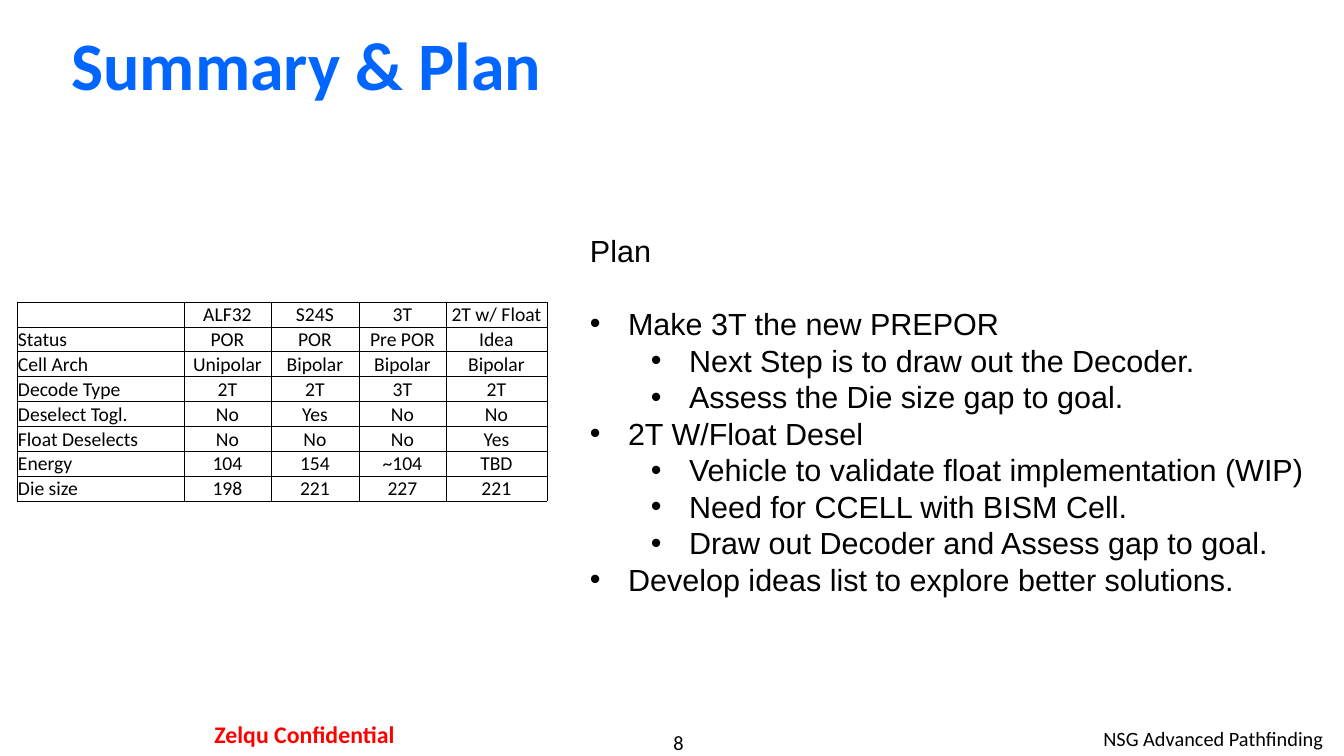
from lxml import etree
from pptx import Presentation
from pptx.dml.color import RGBColor
from pptx.enum.text import MSO_ANCHOR, MSO_AUTO_SIZE, PP_ALIGN
from pptx.oxml.ns import qn
from pptx.util import Pt

LEFT, MID, RIGHT = PP_ALIGN.LEFT, PP_ALIGN.CENTER, PP_ALIGN.RIGHT
TOP, CENTER, BASE = MSO_ANCHOR.TOP, MSO_ANCHOR.MIDDLE, MSO_ANCHOR.BOTTOM
FIXED = MSO_AUTO_SIZE.NONE
TITLE_ONLY = 5

ROWS = [
    ["", "ALF32", "S24S", "3T", "2T w/ Float"],
    ["Status", "POR", "POR", "Pre POR", "Idea"],
    ["Cell Arch", "Unipolar", "Bipolar", "Bipolar", "Bipolar"],
    ["Decode Type", "2T", "2T", "3T", "2T"],
    ["Deselect Togl.", "No", "Yes", "No", "No"],
    ["Float Deselects", "No", "No", "No", "Yes"],
    ["Energy", "104", "154", "~104", "TBD"],
    ["Die size", "198", "221", "227", "221"],
]
PLAN = [
    (0, "Make 3T the new PREPOR"),
    (1, "Next Step is to draw out the Decoder."),
    (1, "Assess the Die size gap to goal."),
    (0, "2T W/Float Desel"),
    (1, "Vehicle to validate float implementation (WIP)"),
    (1, "Need for CCELL with BISM Cell."),
    (1, "Draw out Decoder and Assess gap to goal."),
    (0, "Develop ideas list to explore better solutions."),
]


def px(n):
    return round(n * 914400 / 100.8)


def color(code):
    return RGBColor.from_string(code)


def write(para, text, size=14, font="Calibri", ink="000000", bold=False,
          align=LEFT):
    para.alignment = align
    if not text:
        etree.SubElement(para._p, qn("a:endParaRPr"), sz=str(size * 100))
        return
    run = para.add_run()
    run.text = text
    run.font.size = Pt(size)
    run.font.name = font
    run.font.bold = bold
    run.font.color.rgb = color(ink)


class Page:
    body, lead = 21.8, 26.1  # plan text size and line pitch in points

    def __init__(self, deck):
        self.slide = deck.slides.add_slide(deck.slide_layouts[TITLE_ONLY])

    def frame(self, shape, inset, anchor=TOP):
        frame = shape.text_frame
        frame.word_wrap = True
        frame.auto_size = FIXED
        frame.vertical_anchor = anchor
        frame.margin_left = frame.margin_right = px(inset[0])
        frame.margin_top = frame.margin_bottom = px(inset[1])
        return frame

    def title(self, box, text):
        shape = self.slide.shapes.title
        shape.left, shape.top, shape.width, shape.height = map(px, box)
        frame = self.frame(shape, (10, 5), CENTER)
        write(frame.paragraphs[0], text, size=48.5, ink="0066FF", bold=True,
              align=MID)

    def label(self, box, text, inset=(10, 5), **style):
        shape = self.slide.shapes.add_textbox(*map(px, box))
        frame = self.frame(shape, inset)
        write(frame.paragraphs[0], text, **style)
        return frame

    def bullets(self, box, head, items):
        frame = self.label(box, head, size=self.body, font="Arial")
        for level, text in items:
            para = frame.add_paragraph()
            props = para._p.get_or_add_pPr()
            props.set("marL", str(px(38 + 61 * level)))
            props.set("indent", str(px(-38)))
            etree.SubElement(props, qn("a:buFont"), typeface="Arial")
            etree.SubElement(props, qn("a:buChar"), char="•")
            para.level = level
            write(para, text, size=self.body, font="Arial")
        for para in frame.paragraphs:
            para.line_spacing = Pt(self.lead)
        frame.paragraphs[1].space_before = Pt(self.lead)

    def border(self, cell):
        props = cell._tc.get_or_add_tcPr()
        for side in ("lnL", "lnR", "lnT", "lnB"):
            line = etree.SubElement(props, qn("a:" + side), w=str(Pt(0.5)))
            fill = etree.SubElement(line, qn("a:solidFill"))
            etree.SubElement(fill, qn("a:srgbClr"), val="000000")

    def table(self, left, top, cols, high, rows):
        size = (left, top, sum(cols), high * len(rows))
        grid = self.slide.shapes.add_table(
            len(rows), len(cols), *map(px, size)).table
        grid.first_row = grid.horz_banding = False
        for col, wide in zip(grid.columns, cols):
            col.width = px(wide)
        for row, texts in zip(grid.rows, rows):
            row.height = px(high)
            for i, (cell, text) in enumerate(zip(row.cells, texts)):
                self.border(cell)
                cell.fill.solid()
                cell.fill.fore_color.rgb = color("FFFFFF")
                cell.margin_left = cell.margin_right = px(1)
                cell.margin_top, cell.margin_bottom = px(1), 0
                cell.vertical_anchor = CENTER if i else BASE
                write(cell.text_frame.paragraphs[0], text,
                      align=MID if i else LEFT)


def main():
    deck = Presentation()
    deck.slide_width, deck.slide_height = px(1344), px(756)
    page = Page(deck)

    # Footer
    page.label((561, 730, 235, 24), "8", inset=(0, 0), size=14.5, align=MID)
    page.label((890, 721, 443, 35), "NSG Advanced Pathfinding", size=14.5,
               align=RIGHT)
    page.label((156, 714, 297, 41), "Zelqu Confidential", inset=(12, 6),
               size=17, ink="FF0000", bold=True, align=MID)

    # Title
    page.title((42, 17, 529, 93), "Summary & Plan")

    # Comparison of cell options
    page.table(17, 302, (167, 87, 88, 87, 101), 24, ROWS)

    # Plan
    page.bullets((580, 227, 740, 380), "Plan", PLAN)

    deck.save("out.pptx")


if __name__ == "__main__":
    main()
